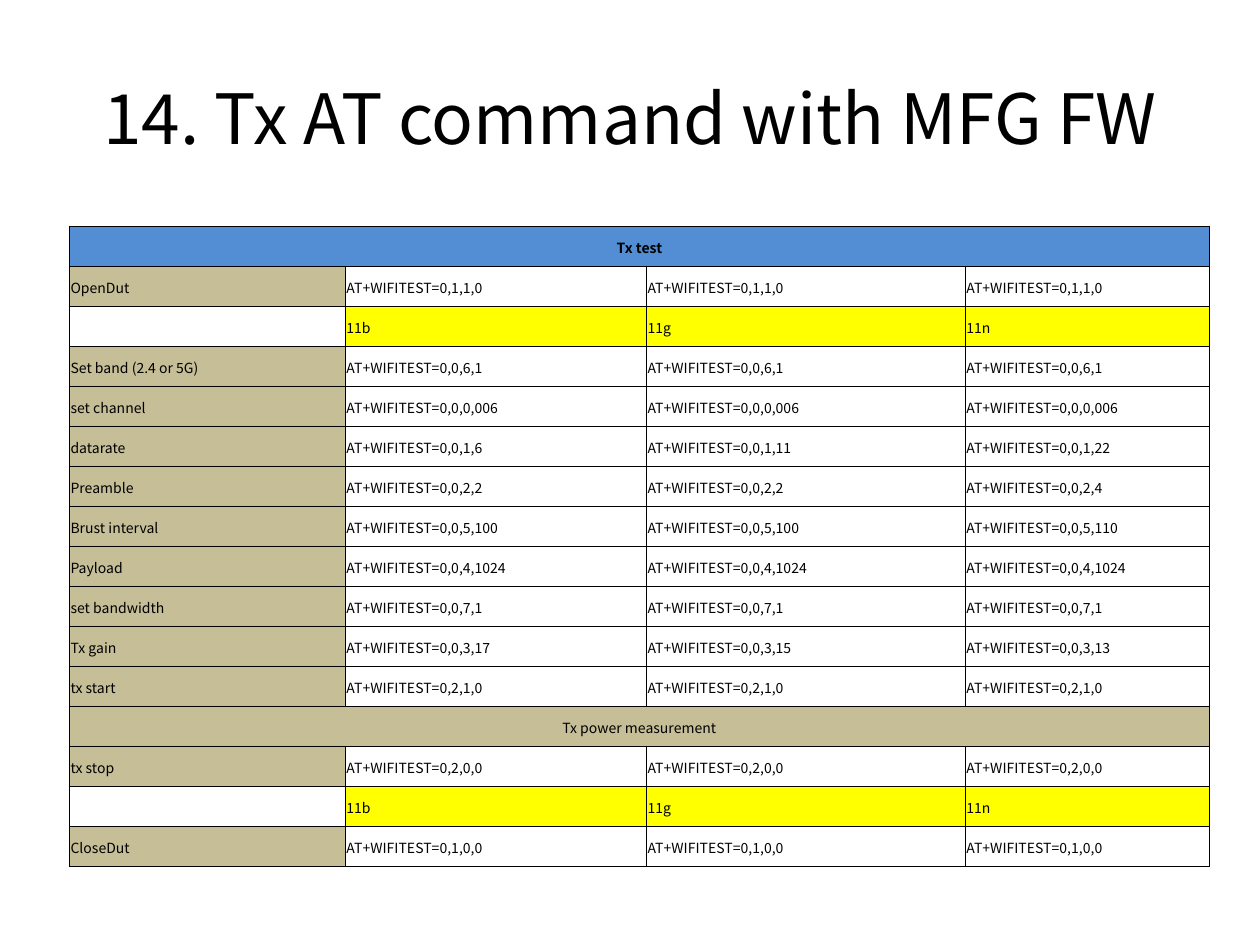
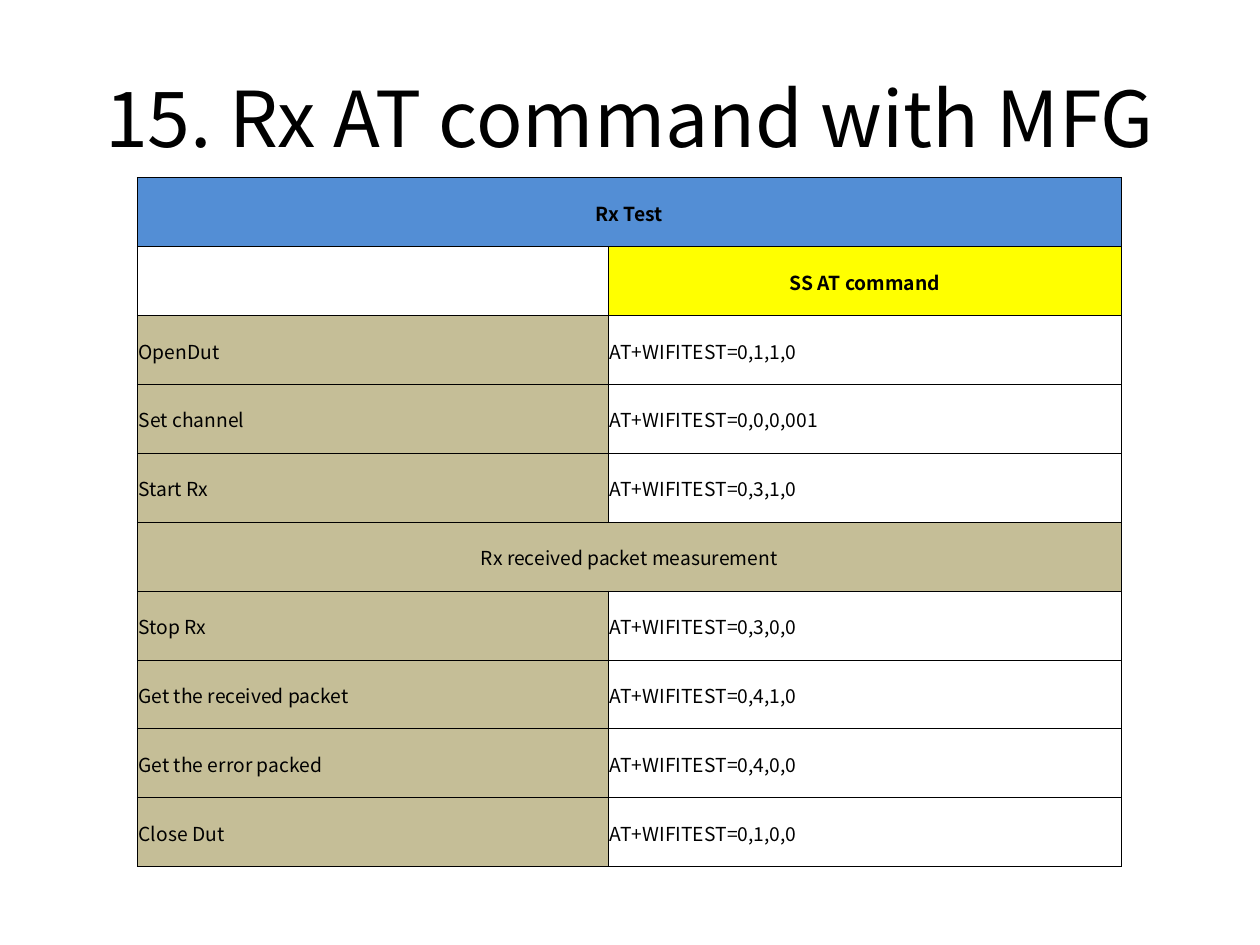
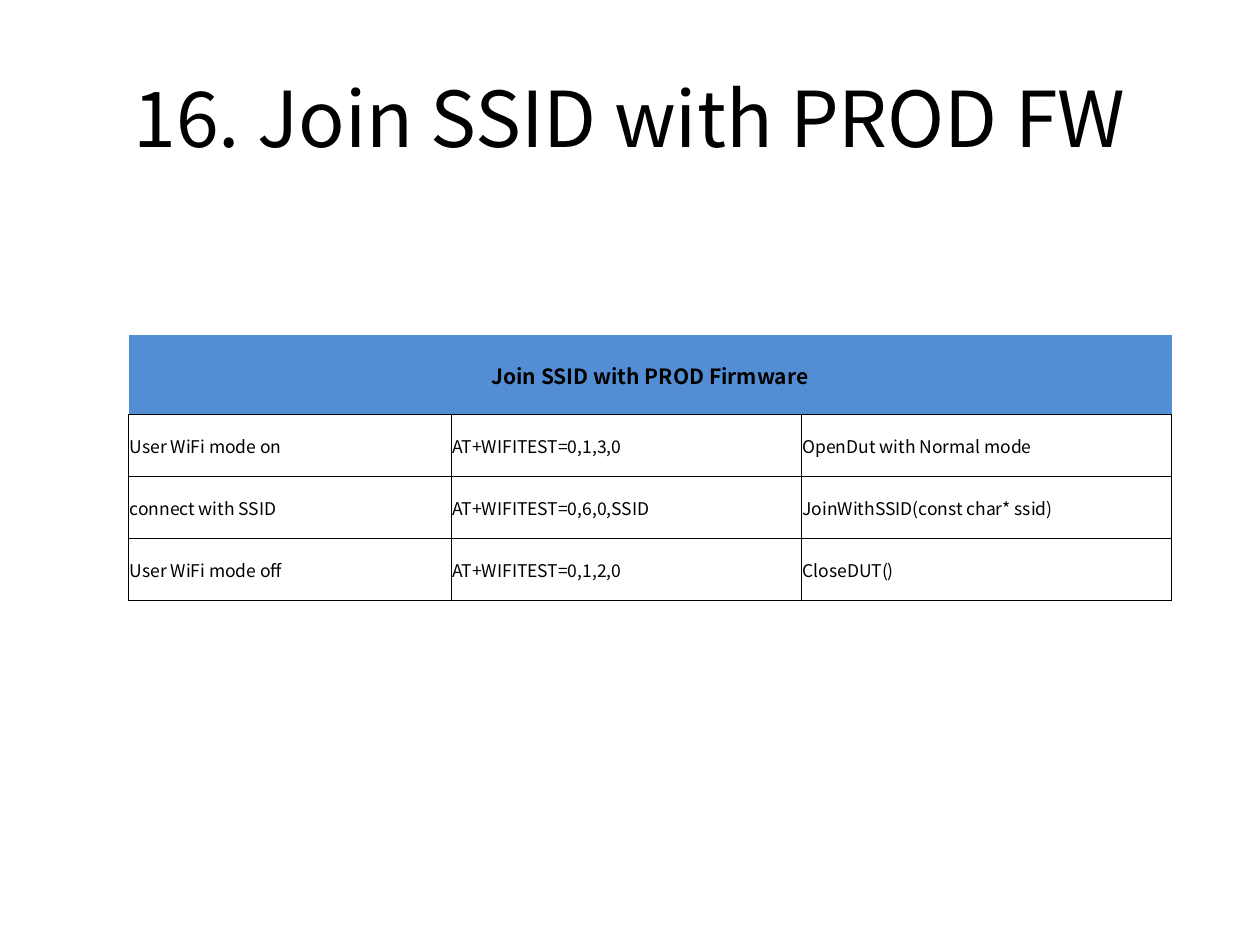
from dataclasses import dataclass

from lxml.etree import SubElement
from pptx import Presentation
from pptx.dml.color import RGBColor
from pptx.enum.text import MSO_ANCHOR, MSO_AUTO_SIZE, PP_ALIGN
from pptx.oxml.ns import qn
from pptx.util import Inches, Pt


@dataclass(frozen=True)
class Theme:
    font: str = "Noto Sans CJK KR"
    ink: str = "000000"
    head: str = "538ED5"
    label: str = "C5BE97"
    mark: str = "FFFF00"
    title: float = 44
    tight: float = 39.6
    line: float = 0.5


THEME = Theme()
WIDE, HIGH = Inches(10), Inches(7.5)
UNIT = WIDE // 100
ALL = "LRTB"
INSET = Inches(0.01)

LEFT = {"bold": False, "align": PP_ALIGN.LEFT}
MID = {"bold": False, "align": PP_ALIGN.CENTER}
STRONG = {"bold": True, "align": PP_ALIGN.CENTER}

KINDS = {
    "head": [(THEME.head, STRONG)],
    "note": [(THEME.label, MID)],
    "step": [(THEME.label, LEFT), (None, LEFT)],
    "mark": [(None, LEFT), (THEME.mark, LEFT)],
    "peak": [(None, LEFT), (THEME.mark, STRONG)],
    "plain": [(None, LEFT)],
}


def grid(count):
    return int(count * UNIT)


def assign(target, values):
    for name, value in values.items():
        setattr(target, name, value)


def style(font, size, bold=False):
    assign(font, {"name": THEME.font, "size": Pt(size), "bold": bold})
    font.color.rgb = RGBColor.from_string(THEME.ink)


def add_title(deck, text, size=THEME.title):
    slide = deck.slides.add_slide(deck.slide_layouts[5])
    title = slide.shapes.title
    assign(title, {"left": grid(5), "top": grid(3),
                   "width": grid(90), "height": grid(12.5)})
    frame = title.text_frame
    assign(frame, {"text": text, "word_wrap": True,
                   "auto_size": MSO_AUTO_SIZE.NONE,
                   "vertical_anchor": MSO_ANCHOR.MIDDLE})
    para = frame.paragraphs[0]
    para.alignment = PP_ALIGN.CENTER
    style(para.runs[0].font, size)
    return slide


def add_edges(cell, edges):
    props = cell._tc.get_or_add_tcPr()
    for side in ALL:
        line = SubElement(props, qn(f"a:ln{side}"), w=str(Pt(THEME.line)))
        if side in edges:
            fill = SubElement(line, qn("a:solidFill"))
            SubElement(fill, qn("a:srgbClr"), val=THEME.ink)
        else:
            SubElement(line, qn("a:noFill"))


def fill_cell(cell, text, size, color, look, edges):
    assign(cell, {"margin_left": INSET, "margin_right": INSET,
                  "margin_top": INSET, "margin_bottom": 0,
                  "vertical_anchor": MSO_ANCHOR.MIDDLE})
    add_edges(cell, edges)
    if color:
        cell.fill.solid()
        cell.fill.fore_color.rgb = RGBColor.from_string(color)
    else:
        cell.fill.background()
    para = cell.text_frame.paragraphs[0]
    para.alignment = look["align"]
    if text:
        run = para.add_run()
        run.text = text
        style(run.font, size, look["bold"])
    else:
        SubElement(para._p, qn("a:endParaRPr"), sz=str(int(size * 100)))


def add_grid(slide, left, top, cols, heights, rows, size, top_size=None, top_edges=ALL):
    frame = slide.shapes.add_table(
        len(rows), len(cols), grid(left), grid(top),
        grid(sum(cols)), grid(sum(heights)))
    table = frame.table
    assign(table, {"first_row": False, "horz_banding": False})
    for col, width in zip(table.columns, cols):
        col.width = grid(width)
    for at, (kind, *texts) in enumerate(rows):
        table.rows[at].height = grid(heights[at])
        looks = KINDS[kind]
        is_top = kind == "head"
        if len(texts) == 1:
            table.cell(at, 0).merge(table.cell(at, len(cols) - 1))
            texts += [""] * (len(cols) - 1)
        for col, text in enumerate(texts):
            color, look = looks[min(col, len(looks) - 1)]
            fill_cell(table.cell(at, col), text,
                      top_size if is_top and top_size else size,
                      color, look, top_edges if is_top else ALL)


def code(tail):
    return f"AT+WIFITEST=0,{tail}"


def step(label, *tails, span=1):
    return ("step", label, *map(code, tails * span))


def same(label, tail):
    return step(label, tail, span=3)


def add_send(deck):
    slide = add_title(deck, "14. Tx AT command with MFG FW", THEME.tight)
    modes = ("mark", "", "11b", "11g", "11n")
    rows = [
        ("head", "Tx test"),
        same("OpenDut", "1,1,0"),
        modes,
        same("Set band (2.4 or 5G)", "0,6,1"),
        same("set channel", "0,0,006"),
        step("datarate", "0,1,6", "0,1,11", "0,1,22"),
        step("Preamble", "0,2,2", "0,2,2", "0,2,4"),
        step("Brust interval", "0,5,100", "0,5,100", "0,5,110"),
        same("Payload", "0,4,1024"),
        same("set bandwidth", "0,7,1"),
        step("Tx gain", "0,3,17", "0,3,15", "0,3,13"),
        same("tx start", "2,1,0"),
        ("note", "Tx power measurement"),
        same("tx stop", "2,0,0"),
        modes,
        same("CloseDut", "1,0,0"),
    ]
    heights = [50.8 / len(rows)] * len(rows)
    add_grid(slide, 5.5, 18, [21.9, 23.9, 25.3, 19.4], heights, rows, 8)


def add_receive(deck):
    slide = add_title(deck, "15. Rx AT command with MFG")
    rows = [
        ("head", "Rx Test"),
        ("peak", "", "SS AT command"),
        step("OpenDut", "1,1,0"),
        step("Set channel", "0,0,001"),
        step("Start Rx", "3,1,0"),
        ("note", "Rx received packet measurement"),
        step("Stop Rx", "3,0,0"),
        step("Get the received packet", "4,1,0"),
        step("Get the error packed", "4,0,0"),
        step("Close Dut", "1,0,0"),
    ]
    heights = [54.7 / len(rows)] * len(rows)
    add_grid(slide, 10.9, 14.1, [37.4, 40.7], heights, rows, 11)


def add_join(deck):
    slide = add_title(deck, "16. Join SSID with PROD FW")
    rows = [
        ("head", "Join SSID with PROD Firmware"),
        ("plain", "User WiFi mode on", code("1,3,0"), "OpenDut with Normal mode"),
        ("plain", "connect with SSID", code("6,0,SSID"), "JoinWithSSID(const char* ssid)"),
        ("plain", "User WiFi mode off", code("1,2,0"), "CloseDUT()"),
    ]
    add_grid(slide, 10.2, 26.6, [25.6, 27.8, 29.4], [6.3] + [4.92] * 3, rows,
             10, top_size=12, top_edges="B")


def main():
    deck = Presentation()
    assign(deck, {"slide_width": WIDE, "slide_height": HIGH})
    for build in (add_send, add_receive, add_join):
        build(deck)
    deck.save("out.pptx")


if __name__ == "__main__":
    main()
